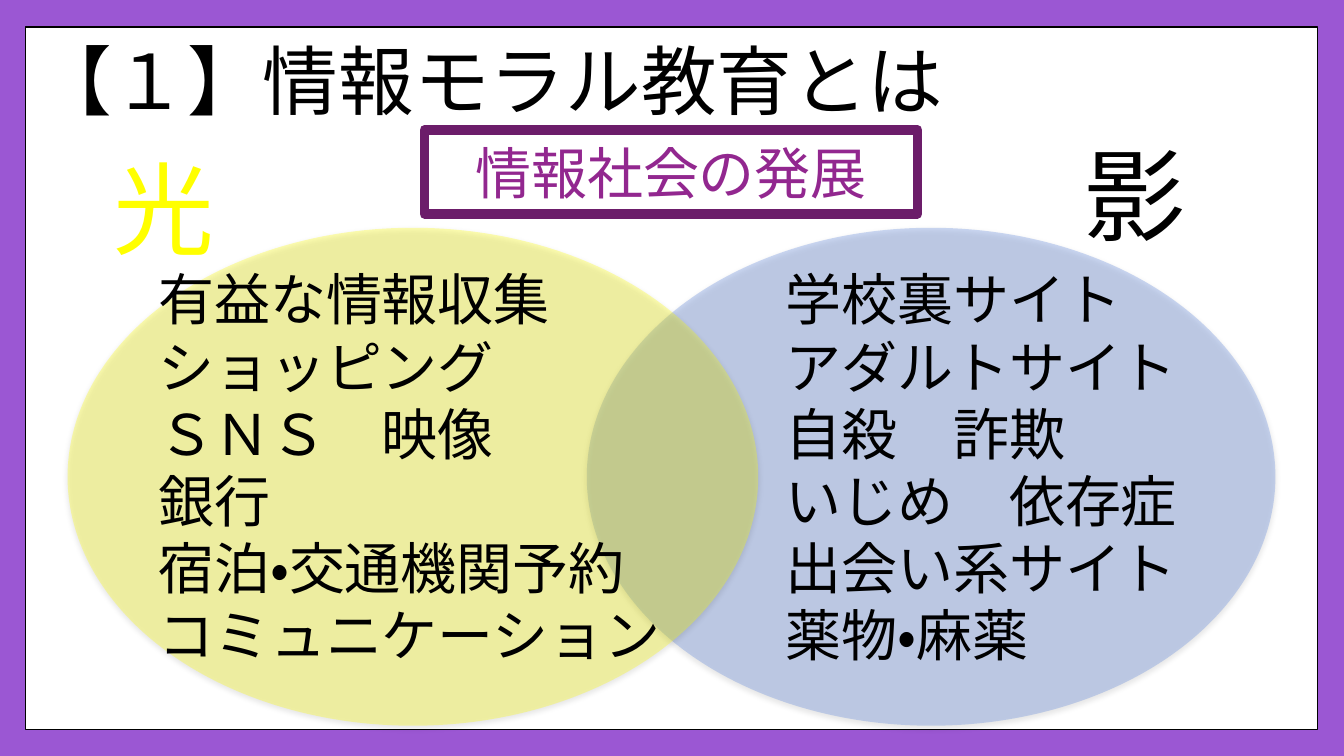
from lxml import etree
from pptx import Presentation
from pptx import util as u
from pptx.dml.color import RGBColor
from pptx.enum import lang, shapes, text
from pptx.oxml import parse_xml

NS = "http://schemas.openxmlformats.org/drawingml/2006/main"
COLORS = {
    "frame": "9B57D3", "paper": "FFFFFF", "ink": "000000", "light": "FFFF00",
    "shadow": "5982DB", "border": "6C1D6A", "topic": "92278F",
}


def rgb(name):
    return RGBColor.from_string(COLORS[name])


def write(shape, lines, size, font, color, wrap=False):
    frame = shape.text_frame
    frame.word_wrap = wrap
    frame.text = "\n".join(lines)
    for paragraph in frame.paragraphs:
        for run in paragraph.runs:
            run.font.size = u.Pt(size)
            run.font.name = font
            run.font.color.rgb = rgb(color)
            run.font.language_id = lang.MSO_LANGUAGE_ID.JAPANESE
    return frame


prs = Presentation()
prs.slide_width, prs.slide_height = u.Inches(13.33), u.Inches(7.5)
slide = prs.slides.add_slide(prs.slide_layouts[6])
slide.background.fill.solid()
slide.background.fill.fore_color.rgb = rgb("frame")

paper = slide.shapes.add_shape(
    shapes.MSO_SHAPE.RECTANGLE,
    u.Inches(0.25), u.Inches(0.27), u.Inches(12.82), u.Inches(6.97))
paper.shadow.inherit = False
paper.fill.solid()
paper.fill.fore_color.rgb = rgb("paper")
paper.line.color.rgb = rgb("ink")
paper.line.width = u.Pt(1)

title = slide.shapes.add_textbox(
    u.Inches(0.26), u.Inches(0.27), u.Inches(12.8), u.Inches(1.14))
title_frame = write(title, ["【１】情報モラル教育とは"], 54, "Lato", "ink", wrap=True)
title_frame.vertical_anchor = text.MSO_ANCHOR.MIDDLE
title_frame.paragraphs[0].line_spacing = 0.9

topic = slide.shapes.add_shape(
    shapes.MSO_SHAPE.RECTANGLE,
    u.Inches(4.21), u.Inches(1.29), u.Inches(4.89), u.Inches(0.83))
topic.shadow.inherit = False
topic.fill.background()
topic.line.color.rgb = rgb("border")
topic.line.width = u.Pt(7)
topic_frame = write(topic, ["情報社会の発展"], 40, "Arial", "topic", wrap=True)
topic_frame.vertical_anchor = text.MSO_ANCHOR.MIDDLE
topic_frame.paragraphs[0].alignment = text.PP_ALIGN.CENTER

for left, width, color in [(5.82, 6.83, "shadow"), (0.67, 6.85, "light")]:
    side = slide.shapes.add_shape(
        shapes.MSO_SHAPE.OVAL,
        u.Inches(left), u.Inches(2.26), u.Inches(width), u.Inches(4.94))
    side.shadow.inherit = False
    side.fill.solid()
    side.fill.fore_color.rgb = rgb(color)
    side.line.fill.background()
    props = side.element.spPr
    tint = props.find(f"{{{NS}}}solidFill/{{{NS}}}srgbClr")
    etree.SubElement(tint, f"{{{NS}}}alpha", val="30000")
    props.find(f"{{{NS}}}effectLst").append(parse_xml(
        f'<a:outerShdw xmlns:a="{NS}" blurRad="{u.Pt(3.5)}" dist="{u.Pt(2.2)}" '
        f'dir="5400000" rotWithShape="0"><a:srgbClr val="{COLORS["ink"]}">'
        '<a:alpha val="32000"/></a:srgbClr></a:outerShdw>'))

for left, top, word, color in [(1.03, 1.41, "光", "light"), (10.66, 1.27, "影", "ink")]:
    heading = slide.shapes.add_textbox(
        u.Inches(left), u.Inches(top), u.Inches(1.21), u.Inches(1.31))
    heading_frame = write(heading, [word], 72, "Lato", color)
    if color == "light":
        heading_frame.paragraphs[0].runs[0].font._element.insert(0, parse_xml(
            f'<a:ln xmlns:a="{NS}" w="{u.Pt(0.75)}"><a:solidFill>'
            f'<a:srgbClr val="{COLORS["border"]}"/></a:solidFill></a:ln>'))

benefits = ["有益な情報収集", "ショッピング", "ＳＮＳ　映像", "銀行",
            "宿泊・交通機関予約", "コミュニケーション"]
risks = ["学校裏サイト", "アダルトサイト", "自殺　詐欺", "いじめ　依存症",
         "出会い系サイト", "薬物・麻薬"]
for left, width, examples in [(1.47, 5.25, benefits), (7.69, 4.13, risks)]:
    listing = slide.shapes.add_textbox(
        u.Inches(left), u.Inches(2.58), u.Inches(width), u.Inches(4.14))
    write(listing, examples, 40, "Arial", "ink")

prs.save("out.pptx")
